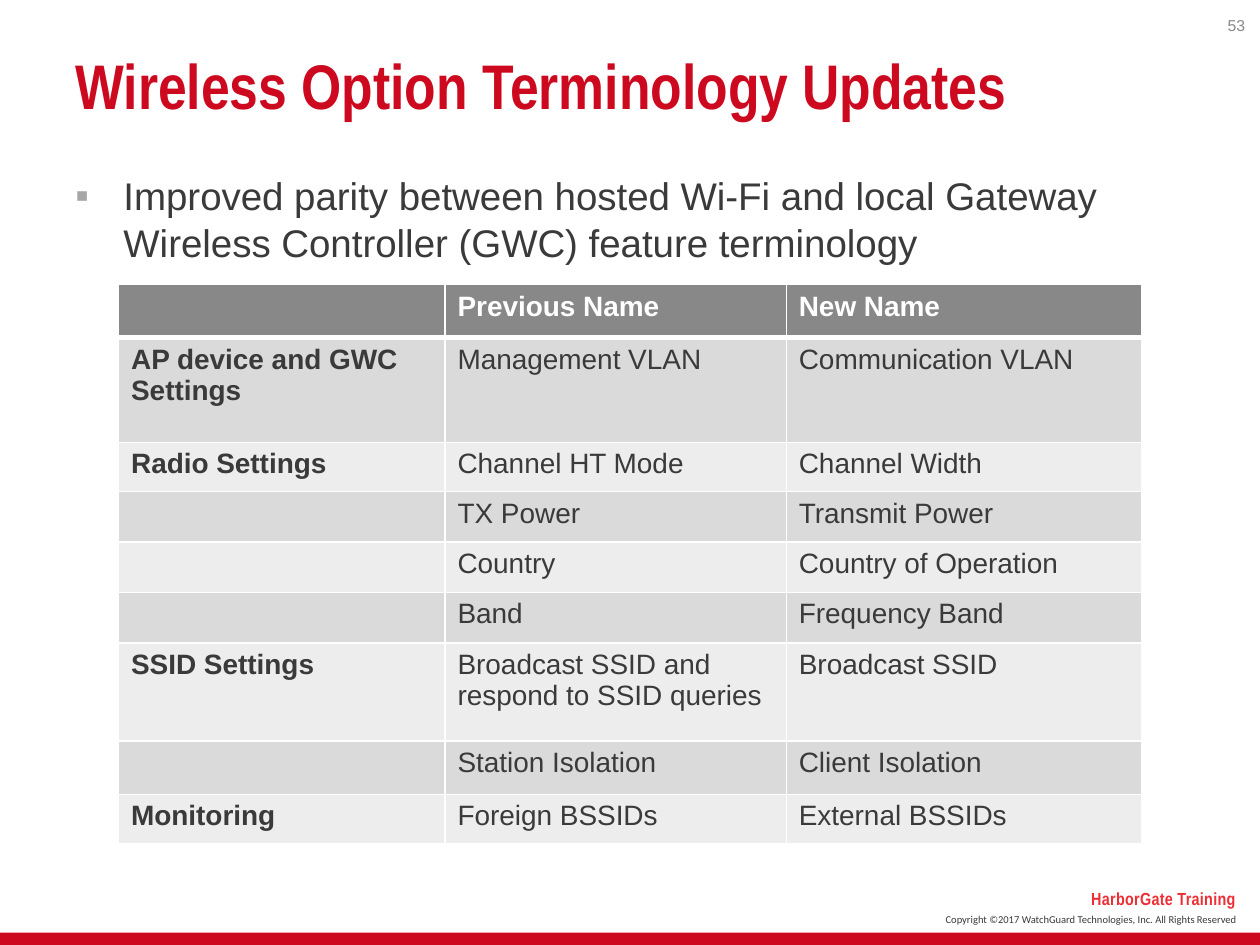
from dataclasses import dataclass

from lxml import etree
from pptx import Presentation
from pptx.dml.color import RGBColor
from pptx.enum.shapes import MSO_SHAPE
from pptx.enum.text import MSO_ANCHOR, PP_ALIGN
from pptx.oxml.ns import qn
from pptx.util import Cm, Pt

RECTANGLE = MSO_SHAPE.RECTANGLE
LEFT, RIGHT = PP_ALIGN.LEFT, PP_ALIGN.RIGHT
TOP, MIDDLE = MSO_ANCHOR.TOP, MSO_ANCHOR.MIDDLE


@dataclass(frozen=True)
class Style:
    font: str
    size: float
    color: str
    bold: bool = False


class Theme:
    red = "CD0920"
    white = "FFFFFF"
    bullet = "A6A6A6"
    header_fill = "888888"
    band_fills = ("DADADA", "EDEDED")
    title = Style("Arial Narrow", 36, red, True)
    body = Style("Arial", 22, "3A3A3A")
    header = Style("Arial", 16, white, True)
    label = Style("Arial", 16, "3A3A3A", True)
    value = Style("Arial", 16, "3A3A3A")
    number = Style("Arial", 9, "898989")
    training = Style("Arial Narrow", 10, "ED2E34", True)
    copyright = Style("Calibri", 6, "3A3A3A")


TITLE = "Wireless Option Terminology Updates"
BULLET = ("Improved parity between hosted Wi-Fi and local Gateway "
          "Wireless Controller (GWC) feature terminology")
TRAINING = "HarborGate Training"
COPYRIGHT = "Copyright ©2017 WatchGuard Technologies, Inc. All Rights Reserved"
PAGE_NUMBER = "53"

TERMS = [
    ("", "Previous Name", "New Name"),
    ("AP device and GWC Settings", "Management VLAN", "Communication VLAN"),
    ("Radio Settings", "Channel HT Mode", "Channel Width"),
    ("", "TX Power", "Transmit Power"),
    ("", "Country", "Country of Operation"),
    ("", "Band", "Frequency Band"),
    ("SSID Settings", "Broadcast SSID and respond to SSID queries", "Broadcast SSID"),
    ("", "Station Isolation", "Client Isolation"),
    ("Monitoring", "Foreign BSSIDs", "External BSSIDs"),
]
COLUMN_WIDTHS = (6.58, 6.88, 7.16)
ROW_HEIGHTS = (1.07, 2.11, 0.99, 0.99, 0.99, 0.99, 1.98, 1.07, 0.99)


def color(value):
    return RGBColor.from_string(value)


def add_run(paragraph, text, style):
    run = paragraph.add_run()
    run.text = text
    run.font.name = style.font
    run.font.size = Pt(style.size)
    run.font.bold = style.bold
    run.font.color.rgb = color(style.color)
    return run


def add_text(slide, box, text, style, align=LEFT, anchor=TOP, inset=None):
    frame = slide.shapes.add_textbox(*map(Cm, box)).text_frame
    frame.word_wrap = True
    frame.vertical_anchor = anchor
    if inset is not None:
        frame.margin_left = frame.margin_right = Cm(inset)
        frame.margin_top = frame.margin_bottom = Cm(inset)
    paragraph = frame.paragraphs[0]
    paragraph.alignment = align
    return paragraph, add_run(paragraph, text, style)


def add_bullet(paragraph, indent):
    properties = paragraph._p.get_or_add_pPr()
    properties.set("marL", str(Cm(indent)))
    properties.set("indent", str(-Cm(indent)))
    bullet_color = etree.SubElement(properties, qn("a:buClr"))
    etree.SubElement(bullet_color, qn("a:srgbClr"), val=Theme.bullet)
    etree.SubElement(properties, qn("a:buFont"), typeface="Arial")
    etree.SubElement(properties, qn("a:buChar"), char="▪")


def set_borders(cell, widths):
    properties = cell._tc.get_or_add_tcPr()
    for side, width in widths.items():
        line = etree.SubElement(properties, qn(f"a:ln{side}"), w=str(Pt(width)))
        fill = etree.SubElement(line, qn("a:solidFill"))
        etree.SubElement(fill, qn("a:srgbClr"), val=Theme.white)


def add_terms_table(slide, left, top):
    table = slide.shapes.add_table(
        len(TERMS), len(COLUMN_WIDTHS), Cm(left), Cm(top),
        Cm(sum(COLUMN_WIDTHS)), Cm(sum(ROW_HEIGHTS))).table
    for column, width in zip(table.columns, COLUMN_WIDTHS):
        column.width = Cm(width)
    for row_index, (terms, height) in enumerate(zip(TERMS, ROW_HEIGHTS)):
        table.rows[row_index].height = Cm(height)
        is_header = row_index == 0
        borders = {"L": 1, "R": 1, "T": 3 if row_index == 1 else 1,
                   "B": 3 if is_header else 1}
        fill = Theme.header_fill if is_header else Theme.band_fills[(row_index - 1) % 2]
        for column_index, term in enumerate(terms):
            cell = table.cell(row_index, column_index)
            set_borders(cell, borders)
            cell.fill.solid()
            cell.fill.fore_color.rgb = color(fill)
            if term:
                body_style = Theme.value if column_index else Theme.label
                add_run(cell.text_frame.paragraphs[0], term,
                        Theme.header if is_header else body_style)


def add_footer(slide):
    bar = slide.shapes.add_shape(RECTANGLE, Cm(0), Cm(18.8), Cm(25.4), Cm(0.25))
    bar.shadow.inherit = False
    bar.fill.solid()
    bar.fill.fore_color.rgb = color(Theme.red)
    bar.line.fill.background()
    add_text(slide, (16.43, 18.29, 8.74, 0.51), COPYRIGHT, Theme.copyright, RIGHT)
    _, run = add_text(slide, (21.13, 17.91, 3.78, 0.43), TRAINING,
                      Theme.training, RIGHT, inset=0)
    run._r.get_or_add_rPr().set("spc", "20")


def main():
    presentation = Presentation()
    presentation.slide_width, presentation.slide_height = Cm(25.4), Cm(19.05)
    slide = presentation.slides.add_slide(presentation.slide_layouts[6])
    add_footer(slide)
    add_text(slide, (1.27, 0.76, 22.86, 1.88), TITLE, Theme.title, anchor=MIDDLE)
    paragraph, _ = add_text(slide, (1.27, 3.35, 22.86, 13.67), BULLET, Theme.body)
    paragraph.space_after = Pt(6)
    add_bullet(paragraph, 0.97)
    add_terms_table(slide, 2.39, 5.74)
    add_text(slide, (23.7, 0.05, 1.65, 0.91), PAGE_NUMBER, Theme.number, RIGHT, MIDDLE)
    presentation.save("out.pptx")


if __name__ == "__main__":
    main()
